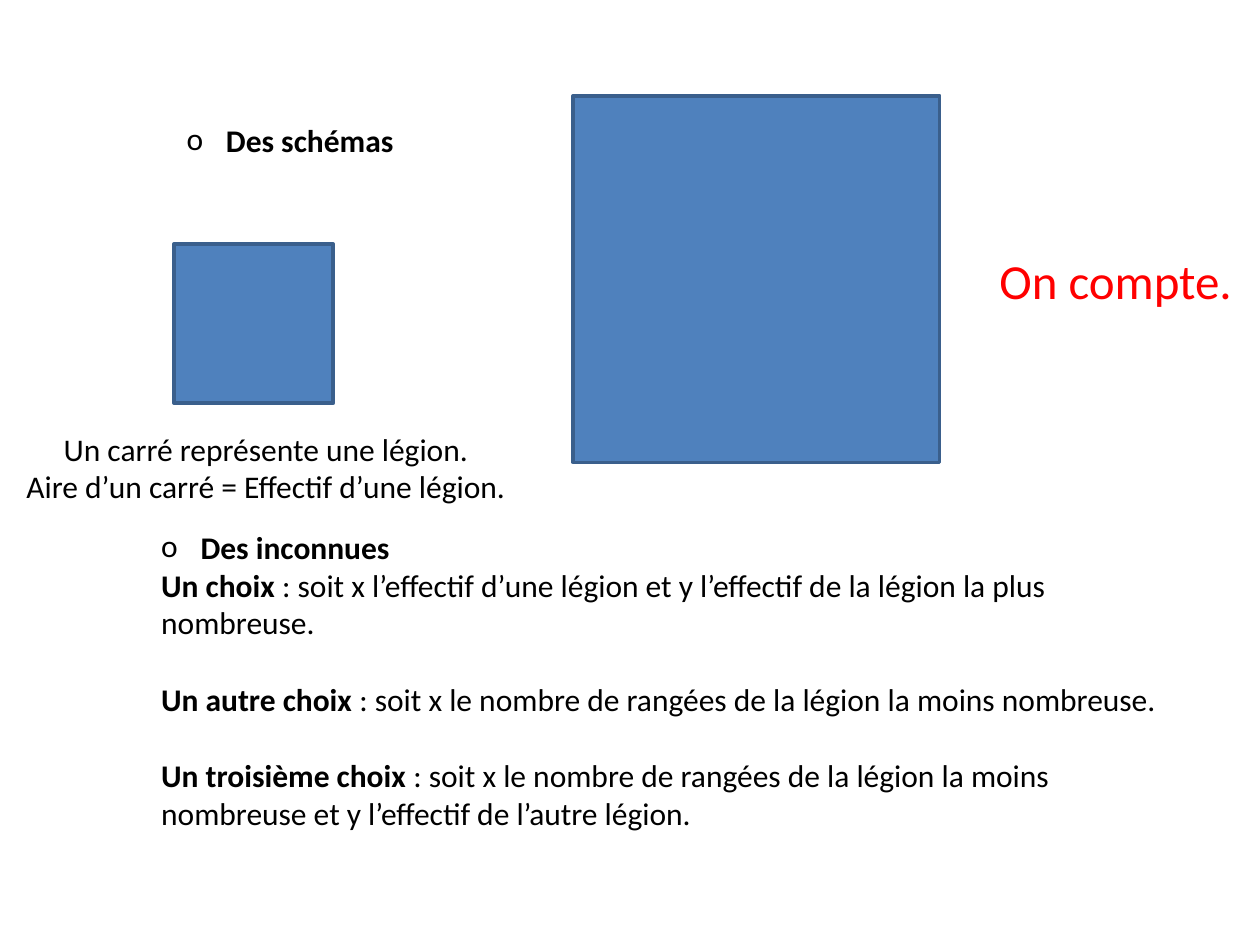
"""Build the slide on diagrams and unknowns for the legion problem."""
from pptx import Presentation
from pptx import util as u
from pptx.dml.color import RGBColor
from pptx.enum import shapes, text
from pptx.oxml import ns
from lxml import etree

BLACK = RGBColor(0x00, 0x00, 0x00)
RED = RGBColor(0xFF, 0x00, 0x00)
BLUE = RGBColor(0x4F, 0x81, 0xBD)
DARK_BLUE = RGBColor(0x3A, 0x5F, 0x8C)
FONT = "Calibri"
INDENT = u.Pt(22.5)
GAP = u.Pt(22)


class Painter:
    def __init__(self, page):
        self.page = page

    def square(self, left, top, side):
        box = self.page.shapes.add_shape(
            shapes.MSO_SHAPE.RECTANGLE, u.Pt(left), u.Pt(top), u.Pt(side), u.Pt(side))
        box.shadow.inherit = False
        box.fill.solid()
        box.fill.fore_color.rgb = BLUE
        box.line.color.rgb = DARK_BLUE
        box.line.width = u.Pt(2)

    def frame(self, left, top, width, height):
        box = self.page.shapes.add_textbox(u.Pt(left), u.Pt(top), u.Pt(width), u.Pt(height))
        frame = box.text_frame
        frame.word_wrap = True
        frame.auto_size = text.MSO_AUTO_SIZE.SHAPE_TO_FIT_TEXT
        return frame

    def span(self, para, words, size=18, color=BLACK, bold=False):
        span = para.add_run()
        span.text = words
        span.font.name = FONT
        span.font.size = u.Pt(size)
        span.font.color.rgb = color
        span.font.bold = bold

    def bullet(self, para, words):
        props = para._p.get_or_add_pPr()
        props.set("marL", str(INDENT))
        props.set("indent", str(-INDENT))
        etree.SubElement(props, ns.qn("a:buFont")).set("typeface", FONT)
        etree.SubElement(props, ns.qn("a:buChar")).set("char", "o")
        self.span(para, words, bold=True)


def main():
    deck = Presentation()
    deck.slide_width, deck.slide_height = u.Pt(720), u.Pt(540)
    painter = Painter(deck.slides.add_slide(deck.slide_layouts[6]))

    schemas = painter.frame(99.5, 65.5, 170, 29)
    painter.bullet(schemas.paragraphs[0], "Des schémas")
    painter.square(99.5, 139.5, 91)
    painter.square(327.5, 54.75, 209.5)

    unknowns = painter.frame(85, 298, 602, 181.5)
    painter.bullet(unknowns.paragraphs[0], "Des inconnues")
    choices = [
        ("Un choix ", ": soit x l’effectif d’une légion et y l’effectif de la légion "
         "la plus nombreuse."),
        ("Un autre choix ", ": soit x le nombre de rangées de la légion la moins nombreuse."),
        ("Un troisième choix ", ": soit x le nombre de rangées de la légion la moins "
         "nombreuse et y l’effectif de l’autre légion."),
    ]
    for index, (label, choice) in enumerate(choices):
        para = unknowns.add_paragraph()
        para.space_before = GAP if index else u.Pt(0)
        painter.span(para, label, bold=True)
        painter.span(para, choice)

    answer = painter.frame(564, 139.5, 156, 41)
    painter.span(answer.paragraphs[0], "On compte.", size=28, color=RED)

    caption = painter.frame(0, 242, 304, 51).paragraphs[0]
    caption.alignment = text.PP_ALIGN.CENTER
    painter.span(caption, "Un carré représente une légion.")
    caption.add_line_break()
    painter.span(caption, "Aire d’un carré = Effectif d’une légion.")

    deck.save("out.pptx")


if __name__ == "__main__":
    main()
